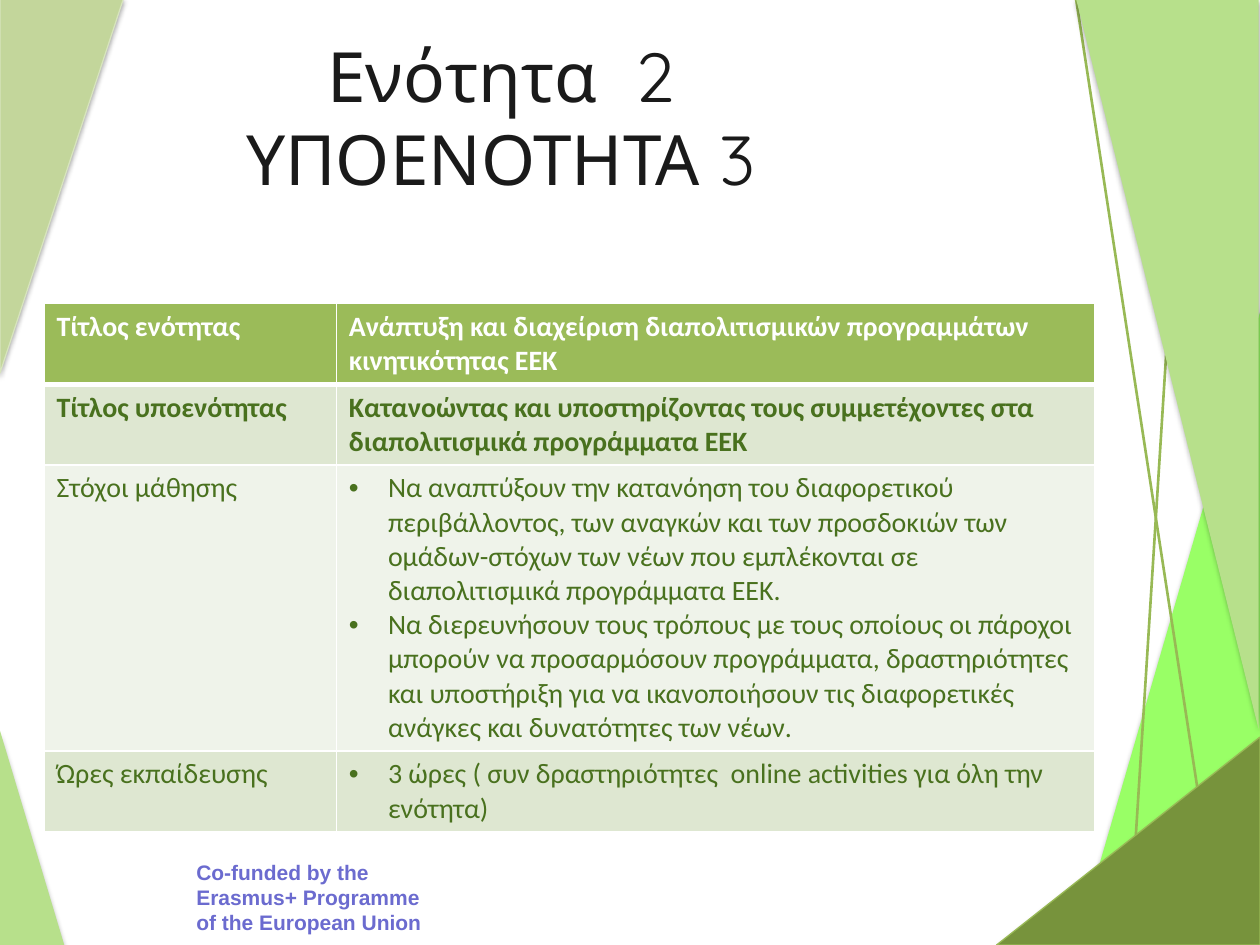
"""Build the Greek training unit overview slide with its green triangle frame."""
from dataclasses import dataclass

from lxml import etree
from pptx import Presentation
from pptx.dml.color import RGBColor
from pptx.enum.shapes import MSO_CONNECTOR, MSO_SHAPE
from pptx.enum.text import MSO_ANCHOR, PP_ALIGN
from pptx.oxml import parse_xml
from pptx.oxml.ns import nsdecls, qn
from pptx.util import Inches, Pt

RIGHT_TRIANGLE = MSO_SHAPE.RIGHT_TRIANGLE
STRAIGHT = MSO_CONNECTOR.STRAIGHT
MIDDLE = MSO_ANCHOR.MIDDLE
CENTER = PP_ALIGN.CENTER

COLORS = {
    "neon": "99FF66", "light": "B7E08B", "sage": "C3D69B", "pale": "D7E4BD",
    "olive": "77933C", "stroke": "98B955", "footer": "6B6BCF", "title": "1A1A1A",
    "header": "9BBB59", "band": "DEE7D1", "plain": "EFF3EA", "body": "49711E",
    "white": "FFFFFF", "shadow": "000000",
}
COLUMN_WIDTHS = (2.32, 6.02)
BULLET_INDENT = 0.31


@dataclass
class Triangle:
    left: float
    top: float
    width: float
    height: float
    fill: str
    flips: str = ""
    outline: str = ""
    shadow_alpha: int = 35
    shadow_distance: float = 1.8


@dataclass
class Stroke:
    start: tuple[float, float]
    end: tuple[float, float]


@dataclass
class UnitRow:
    label: str
    details: tuple[str, ...]
    fill: str
    height: float = 0.64
    color: str = "body"
    bold: bool = False
    bulleted: bool = False
    top_border: float = 1
    bottom_border: float = 1


BACK_TRIANGLES = (
    Triangle(8.54, 2.41, 1.48, 5.09, "neon", "H", shadow_alpha=38, shadow_distance=1.6),
    Triangle(0, 5.8, 0.51, 1.7, "light"),
    Triangle(0, -0.01, 0.98, 2.97, "sage", "V", "pale"),
)
STROKES = (
    Stroke((8.96, 7.5), (9.3, 2.1)),
    Stroke((9.65, 7.21), (8.54, -0.01)),
)
FRONT_TRIANGLES = (
    Triangle(8.54, -0.01, 1.45, 5.8, "light", "HV"),
    Triangle(7.91, 5.85, 2.09, 1.65, "olive", "H", "stroke"),
)
UNIT_ROWS = (
    UnitRow("Τίτλος ενότητας",
            ("Ανάπτυξη και διαχείριση διαπολιτισμικών προγραμμάτων κινητικότητας ΕΕΚ",),
            "header", color="white", bold=True, bottom_border=3),
    UnitRow("Τίτλος υποενότητας",
            ("Κατανοώντας και υποστηρίζοντας τους συμμετέχοντες στα διαπολιτισμικά "
             "προγράμματα ΕΕΚ",),
            "band", bold=True, top_border=3),
    UnitRow("Στόχοι μάθησης",
            ("Να αναπτύξουν την κατανόηση του διαφορετικού περιβάλλοντος, των αναγκών και "
             "των προσδοκιών των ομάδων-στόχων των νέων που εμπλέκονται σε "
             "διαπολιτισμικά προγράμματα ΕΕΚ.",
             "Να διερευνήσουν τους τρόπους με τους οποίους οι πάροχοι μπορούν να "
             "προσαρμόσουν προγράμματα, δραστηριότητες και υποστήριξη για να "
             "ικανοποιήσουν τις διαφορετικές ανάγκες και δυνατότητες των νέων."),
            "plain", height=2.27, bulleted=True),
    UnitRow("Ώρες εκπαίδευσης",
            ("3 ώρες ( συν δραστηριότητες  online activities για όλη την ενότητα)",),
            "band", bulleted=True),
)


def rgb(name: str) -> RGBColor:
    return RGBColor.from_string(COLORS[name])


def style_runs(paragraph, font_name: str, size: float, color: str, bold: bool = False) -> None:
    for run in paragraph.runs:
        run.font.name = font_name
        run.font.size = Pt(size)
        run.font.bold = bold
        run.font.color.rgb = rgb(color)


def draw_triangle(slide, triangle: Triangle) -> None:
    shape = slide.shapes.add_shape(
        RIGHT_TRIANGLE, Inches(triangle.left), Inches(triangle.top),
        Inches(triangle.width), Inches(triangle.height))
    for axis in triangle.flips:
        shape._element.spPr.xfrm.set(f"flip{axis}", "1")
    shape.fill.solid()
    shape.fill.fore_color.rgb = rgb(triangle.fill)
    if triangle.outline:
        shape.line.color.rgb = rgb(triangle.outline)
        shape.line.width = Pt(0.75)
    else:
        shape.line.fill.background()
    shape.shadow.inherit = False
    effects = shape._element.spPr.find(qn("a:effectLst"))
    effects.append(parse_xml(
        f'<a:outerShdw {nsdecls("a")} blurRad="{Pt(3.1)}" '
        f'dist="{Pt(triangle.shadow_distance)}" dir="5400000" rotWithShape="0">'
        f'<a:srgbClr val="{COLORS["shadow"]}">'
        f'<a:alpha val="{triangle.shadow_alpha * 1000}"/></a:srgbClr></a:outerShdw>'))


def draw_stroke(slide, stroke: Stroke) -> None:
    connector = slide.shapes.add_connector(
        STRAIGHT, *(Inches(value) for value in stroke.start + stroke.end))
    connector.line.color.rgb = rgb("stroke")
    connector.line.width = Pt(1.5)
    etree.SubElement(connector._element.spPr, qn("a:effectLst"))


def add_text(slide, left: float, top: float, width: float, height: float, text: str):
    frame = slide.shapes.add_textbox(
        Inches(left), Inches(top), Inches(width), Inches(height)).text_frame
    frame.word_wrap = True
    frame.paragraphs[0].text = text
    return frame


def add_bullet(paragraph) -> None:
    properties = paragraph._p.get_or_add_pPr()
    properties.set("marL", str(Inches(BULLET_INDENT)))
    properties.set("indent", str(-Inches(BULLET_INDENT)))
    etree.SubElement(properties, qn("a:buFont")).set("typeface", "Arial")
    etree.SubElement(properties, qn("a:buChar")).set("char", "•")


def add_borders(cell, row: UnitRow) -> None:
    widths = {"L": 1, "R": 1, "T": row.top_border, "B": row.bottom_border}
    properties = cell._tc.get_or_add_tcPr()
    for side, width in widths.items():
        properties.append(parse_xml(
            f'<a:ln{side} {nsdecls("a")} w="{Pt(width)}"><a:solidFill>'
            f'<a:srgbClr val="{COLORS["white"]}"/></a:solidFill></a:ln{side}>'))


def fill_cell(cell, row: UnitRow, lines: tuple[str, ...], bulleted: bool) -> None:
    cell.text_frame.text = "\n".join(lines)
    for paragraph in cell.text_frame.paragraphs:
        if bulleted:
            add_bullet(paragraph)
        style_runs(paragraph, "Calibri", 16, row.color, row.bold)
    add_borders(cell, row)
    cell.fill.solid()
    cell.fill.fore_color.rgb = rgb(row.fill)


def add_unit_table(slide) -> None:
    table = slide.shapes.add_table(
        len(UNIT_ROWS), len(COLUMN_WIDTHS), Inches(0.35), Inches(2.41),
        Inches(sum(COLUMN_WIDTHS)), Inches(sum(row.height for row in UNIT_ROWS))).table
    for column, width in zip(table.columns, COLUMN_WIDTHS):
        column.width = Inches(width)
    for index, row in enumerate(UNIT_ROWS):
        table.rows[index].height = Inches(row.height)
        fill_cell(table.cell(index, 0), row, (row.label,), False)
        fill_cell(table.cell(index, 1), row, row.details, row.bulleted)


def main() -> None:
    deck = Presentation()
    deck.slide_width, deck.slide_height = Inches(10), Inches(7.5)
    slide = deck.slides.add_slide(deck.slide_layouts[6])
    for triangle in BACK_TRIANGLES:
        draw_triangle(slide, triangle)
    for stroke in STROKES:
        draw_stroke(slide, stroke)
    for triangle in FRONT_TRIANGLES:
        draw_triangle(slide, triangle)
    funding = add_text(slide, 1.46, 6.77, 2, 0.71,
                       "Co-funded by the Erasmus+ Programme of the European Union")
    style_runs(funding.paragraphs[0], "Arial", 12, "footer", True)
    title = add_text(slide, 0.74, 0.3, 6.47, 1.25, "Ενότητα  2\vΥΠΟΕΝΟΤΗΤΑ 3")
    title.vertical_anchor = MIDDLE
    title.paragraphs[0].alignment = CENTER
    style_runs(title.paragraphs[0], "Quicksand", 39.6, "title")
    add_unit_table(slide)
    deck.save("out.pptx")


if __name__ == "__main__":
    main()
